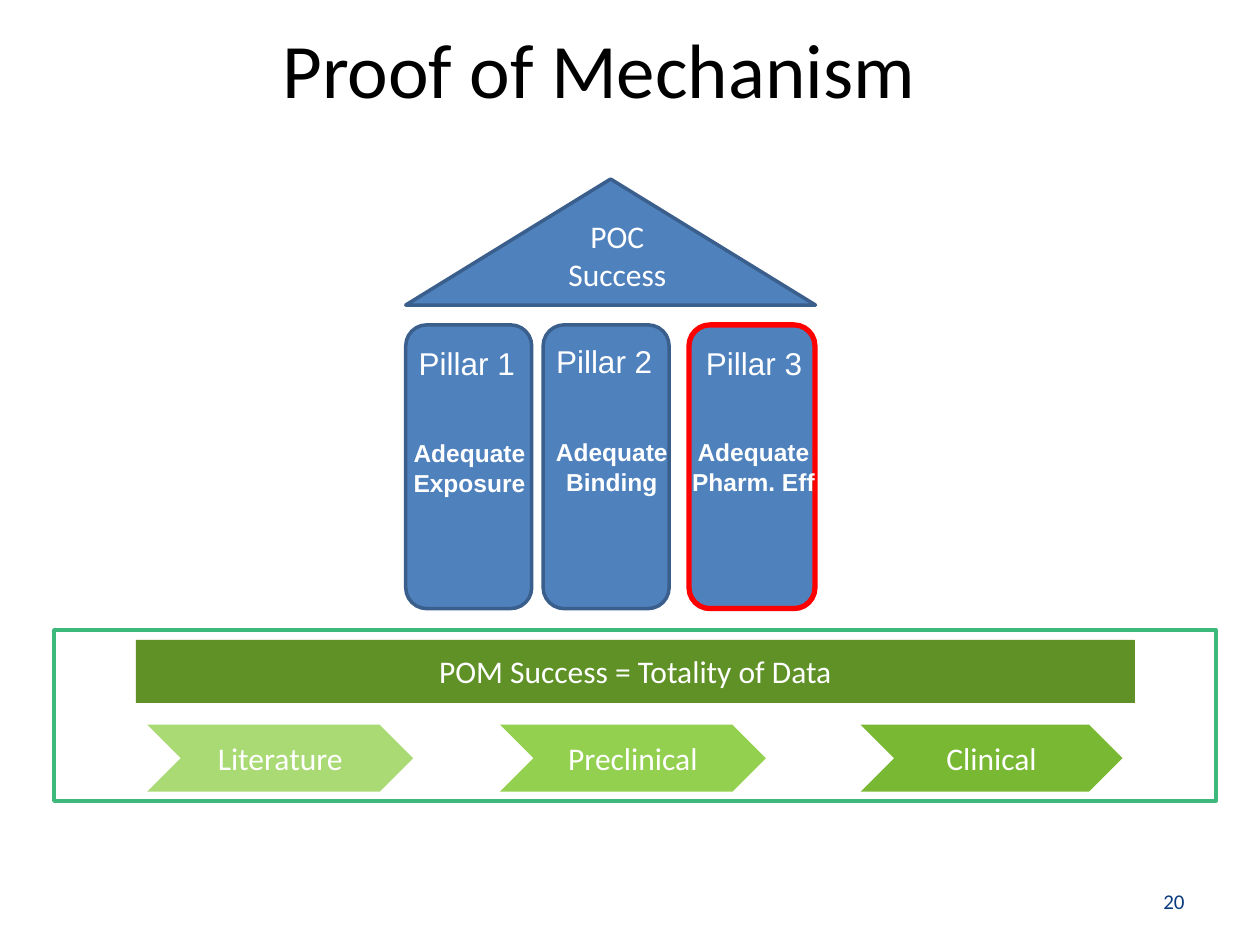
import pptx
import pptx.util
from pptx.dml.color import RGBColor
from pptx.enum.shapes import MSO_SHAPE
from pptx.enum.text import MSO_ANCHOR, PP_ALIGN
from pptx.util import Cm

BLACK = RGBColor(0x00, 0x00, 0x00)
WHITE = RGBColor(0xFF, 0xFF, 0xFF)
BLUE = RGBColor(0x4F, 0x81, 0xBD)
BLUE_EDGE = RGBColor(0x3A, 0x5F, 0x8C)
RED = RGBColor(0xFF, 0x00, 0x00)
DARK_GREEN = RGBColor(0x5F, 0x91, 0x27)
LIGHT_GREEN = RGBColor(0xA9, 0xDA, 0x74)
MID_GREEN = RGBColor(0x93, 0xD0, 0x50)
DEEP_GREEN = RGBColor(0x78, 0xB8, 0x32)
FRAME_GREEN = RGBColor(0x3D, 0xB9, 0x7B)
NAVY = RGBColor(0x09, 0x3A, 0x80)

PILLAR_TOP, PILLAR_WIDTH, PILLAR_HEIGHT = 6.55, 2.54, 5.72
# Pillar left and edge; heading left and top; caption left, top and width
PILLARS = [
    ("Pillar 1", "Adequate\nExposure", 8.18, BLUE_EDGE, 2, (8.18, 6.81), (8.08, 8.71, 2.77)),
    ("Pillar 2", "Adequate\nBinding", 10.95, BLUE_EDGE, 2, (10.95, 6.78), (10.95, 8.69, 2.77)),
    ("Pillar 3", "Adequate\nPharm. Eff", 13.89, RED, 3, (13.97, 6.81), (13.69, 8.69, 3)),
]
EVIDENCE = [
    ("Literature", 2.97, 5.36, LIGHT_GREEN),
    ("Preclinical", 10.08, 5.36, MID_GREEN),
    ("Clinical", 17.35, 5.28, DEEP_GREEN),
]


def write_text(shape, text, size=18, font="Calibri", color=WHITE, bold=False,
               align=PP_ALIGN.CENTER, anchor=MSO_ANCHOR.MIDDLE, wrap=True):
    frame = shape.text_frame
    frame.text = text
    frame.word_wrap = wrap
    frame.vertical_anchor = anchor
    for para in frame.paragraphs:
        para.alignment = align
        for span in para.runs:
            span.font.size = pptx.util.Pt(size)
            span.font.name = font
            span.font.bold = bold
            span.font.color.rgb = color


def add_label(page, text, left, top, width, height, **style):
    box = page.shapes.add_textbox(Cm(left), Cm(top), Cm(width), Cm(height))
    write_text(box, text, **style)


def add_block(page, kind, left, top, width, height, fill=None, edge=None,
              edge_width=2, text=None):
    block = page.shapes.add_shape(kind, Cm(left), Cm(top), Cm(width), Cm(height))
    block.shadow.inherit = False
    if fill is None:
        block.fill.background()
    else:
        block.fill.solid()
        block.fill.fore_color.rgb = fill
    if edge is None:
        block.line.fill.background()
    else:
        block.line.color.rgb = edge
        block.line.width = pptx.util.Pt(edge_width)
    if text:
        write_text(block, text)


def add_title(page, text):
    title = page.shapes.title
    title.left, title.top, title.width, title.height = Cm(0.43), Cm(0.2), Cm(23.29), Cm(2.34)
    write_text(title, text, size=44, color=BLACK)


def add_pillar(page, heading, caption, left, edge, edge_width, heading_at, caption_at):
    add_block(page, MSO_SHAPE.ROUNDED_RECTANGLE, left, PILLAR_TOP, PILLAR_WIDTH,
              PILLAR_HEIGHT, BLUE, edge, edge_width)
    label_style = {"font": "Arial", "anchor": MSO_ANCHOR.TOP, "wrap": False}
    add_label(page, heading, *heading_at, 2.46, 1.02, **label_style)
    add_label(page, caption, *caption_at, 1.45, size=14, bold=True, **label_style)


def main():
    deck = pptx.Presentation()
    deck.slide_width, deck.slide_height = Cm(25.4), Cm(19.05)
    page = deck.slides.add_slide(deck.slide_layouts[5])
    add_title(page, "Proof of Mechanism")

    # Pillars and the roof they carry
    for pillar in PILLARS:
        add_pillar(page, *pillar)
    add_block(page, MSO_SHAPE.ISOSCELES_TRIANGLE, 8.18, 3.61, 8.26, 2.54, BLUE, BLUE_EDGE)
    add_label(page, "POC\nSuccess", 10.97, 4.24, 2.95, 1.8)

    # Foundation: data bar, evidence chevrons and the frame around them
    add_block(page, MSO_SHAPE.RECTANGLE, 2.74, 12.9, 20.14, 1.27, DARK_GREEN,
              text="POM Success = Totality of Data")
    for name, left, width, fill in EVIDENCE:
        add_block(page, MSO_SHAPE.CHEVRON, left, 14.61, width, 1.35, fill, text=name)
    add_block(page, MSO_SHAPE.RECTANGLE, 1.09, 12.7, 23.42, 3.45, edge=FRAME_GREEN)

    # Page number
    add_label(page, "20", 18.21, 17.65, 5.92, 1.02, size=12, color=NAVY, align=PP_ALIGN.RIGHT)

    deck.save("out.pptx")


if __name__ == "__main__":
    main()
